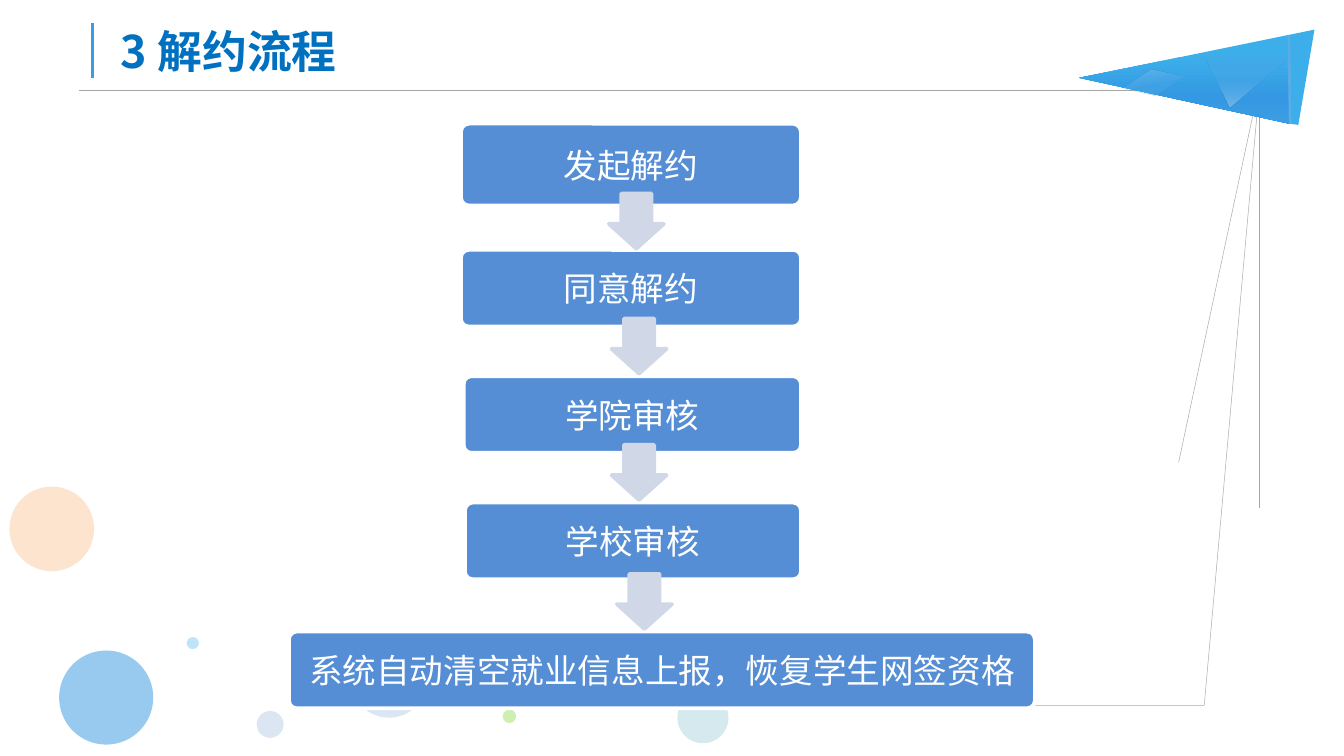
from lxml.etree import SubElement
from pptx import Presentation
from pptx.dml.color import RGBColor
from pptx.enum.shapes import MSO_CONNECTOR, MSO_SHAPE
from pptx.enum.text import MSO_ANCHOR, PP_ALIGN
from pptx.oxml.ns import qn
from pptx.util import Inches, Pt

FONT = "Noto Sans CJK SC"
BLUE, ARROW, GREY = "558ED5", "D0D8E8", "A6A6A6"


def rgb(value):
    """Turn a hex string into a colour."""
    return RGBColor.from_string(value)


def set_gradient(shape, stops):
    """Fill a shape from top to bottom with (position, colour, opacity) stops."""
    shape.fill.gradient()
    shape.fill.gradient_angle = 270
    gs_list = shape._element.spPr.find(qn("a:gradFill")).find(qn("a:gsLst"))
    for old in list(gs_list):
        gs_list.remove(old)
    for pos, color, opacity in stops:
        gs = SubElement(gs_list, qn("a:gs"), pos=str(pos * 1000))
        clr = SubElement(gs, qn("a:srgbClr"), val=color)
        SubElement(clr, qn("a:alpha"), val=str(opacity * 1000))


def paint(shape, fill, line=None):
    """Give a shape a solid or gradient fill, an optional outline and no shadow."""
    shape.shadow.inherit = False
    if isinstance(fill, str):
        shape.fill.solid()
        shape.fill.fore_color.rgb = rgb(fill)
    else:
        set_gradient(shape, fill)
    if line:
        shape.line.color.rgb = rgb(line)
        shape.line.width = Pt(2)
    else:
        shape.line.fill.background()


def add_shape(s, kind, box, fill, line=None, adj=(), rotation=0):
    """Add a preset shape."""
    sp = s.shapes.add_shape(kind, *map(Inches, box))
    sp.rotation = rotation
    for i, value in enumerate(adj):
        sp.adjustments[i] = value
    paint(sp, fill, line)
    return sp


def add_polygon(s, points, fill):
    """Add a closed outline through points given in inches."""
    start, *rest = [(Inches(x), Inches(y)) for x, y in points]
    builder = s.shapes.build_freeform(*start)
    builder.add_line_segments(rest, close=True)
    paint(builder.convert_to_shape(), fill)


def add_line(s, ends, color, width):
    """Add a straight line without shadow."""
    line = s.shapes.add_connector(MSO_CONNECTOR.STRAIGHT, *map(Inches, ends))
    line.line.color.rgb = rgb(color)
    line.line.width = Pt(width)
    SubElement(line._element.spPr, qn("a:effectLst"))


def write(tf, text, color, align, **fmt):
    """Write one formatted paragraph, centred vertically."""
    tf.word_wrap = True
    tf.vertical_anchor = MSO_ANCHOR.MIDDLE
    p = tf.paragraphs[0]
    p.alignment = align
    r = p.add_run()
    r.text = text
    for name, value in {"name": FONT, **fmt}.items():
        setattr(r.font, name, value)
    r.font.color.rgb = rgb(color)
    SubElement(r._r.get_or_add_rPr(), qn("a:ea"), typeface=FONT)


def add_title(s, text):
    """Move and fill the title placeholder."""
    sp = s.shapes.title
    box = {"left": 0.8, "top": 0.13, "width": 5.85, "height": 0.5}
    for name, value in box.items():
        setattr(sp, name, Inches(value))
    write(sp.text_frame, text, "0070C0", PP_ALIGN.LEFT, size=Pt(24), bold=True)


def add_step(s, text, box):
    """Add one step of the process."""
    sp = add_shape(s, MSO_SHAPE.ROUNDED_RECTANGLE, box, BLUE, "FFFFFF", [0.1])
    write(sp.text_frame, text, "FFFFFF", PP_ALIGN.CENTER, size=Pt(18))


def add_arrow(s, left, top):
    """Add an arrow between two steps."""
    box = (left, top, 0.41, 0.41)
    add_shape(s, MSO_SHAPE.DOWN_ARROW, box, ARROW, ARROW, [0.55, 0.45])


def add_circles(s):
    """Add the decorative circles."""
    for left, top, size, color in [
        (0.44, 4.84, 0.7, "98CAF0"),
        (5.04, 5.15, 0.38, "D5E9EF"),
        (2.61, 4.77, 0.57, "DCE6F2"),
        (1.39, 4.74, 0.09, "BEE4FA"),
        (1.91, 5.29, 0.2, "DCE6F2"),
        (3.74, 5.28, 0.1, "CDF0B1"),
        (0.07, 3.62, 0.63, "FDE4CF"),
    ]:
        box = (left, top, size, size)
        add_shape(s, MSO_SHAPE.OVAL, box, color, rotation=180)


def add_rules(s):
    """Add the thin rules of the frame."""
    for ends, color, width in [
        ((8.52, 0.67, 0.59, 0.67), GREY, 0.25),
        ((9.37, 0.77, 9.37, 3.78), GREY, 0.25),
        ((9.36, 0.77, 8.96, 5.25), GREY, 0.25),
        ((9.36, 0.68, 8.77, 3.44), GREY, 0.25),
        ((8.96, 5.25, 5.74, 5.25), "C6C6C6", 0.75),
        ((0.69, 0.17, 0.69, 0.58), "3A9CE3", 1.5),
    ]:
        add_line(s, ends, color, width)


def add_plane(s):
    """Add the faceted blue triangle in the corner."""
    tail = [(9.78, 0.22), (9.66, 0.93), (9.59, 0.92), (9.59, 0.26)]
    add_polygon(s, tail, "3CAEEA")
    body = [(0, "3CAEEA", 100), (25, "3CAEEA", 100),
            (70, "3499E2", 100), (100, "3C9DE3", 100)]
    add_polygon(s, [(9.59, 0.26), (9.59, 0.92), (8.03, 0.58)], body)
    glass = [(0, "6FB7EA", 100), (55, "61AFE8", 20),
             (83, "4BA5E5", 40), (100, "4AA4E5", 20)]
    add_shape(s, MSO_SHAPE.ISOSCELES_TRIANGLE, (8.96, 0.42, 0.64, 0.38), glass,
              adj=[0.705], rotation=180)
    add_shape(s, MSO_SHAPE.FLOWCHART_DECISION, (8.35, 0.52, 0.47, 0.19), glass,
              rotation=349.9)
    add_line(s, (8.8, 0.57, 8.96, 0.42), "4BA4E5", 0.5)
    add_line(s, (9.59, 0.26, 9.6, 0.92), "5BABE7", 1.5)


def main():
    """Build the slide."""
    prs = Presentation()
    prs.slide_width = Inches(10)
    prs.slide_height = Inches(10) * 9 // 16
    s = prs.slides.add_slide(prs.slide_layouts[5])
    add_rules(s)
    add_circles(s)
    add_plane(s)
    add_title(s, "3 解约流程")
    for text, box in [
        ("发起解约", (3.43, 0.92, 2.53, 0.61)),
        ("同意解约", (3.43, 1.86, 2.53, 0.57)),
        ("学院审核", (3.45, 2.8, 2.51, 0.57)),
        ("学校审核", (3.46, 3.74, 2.5, 0.57)),
        ("系统自动清空就业信息上报，恢复学生网签资格", (2.15, 4.7, 5.55, 0.57)),
    ]:
        add_step(s, text, box)
    for left, top in [(4.53, 1.44), (4.55, 2.37), (4.55, 3.31), (4.59, 4.27)]:
        add_arrow(s, left, top)
    prs.save("out.pptx")


if __name__ == "__main__":
    main()
